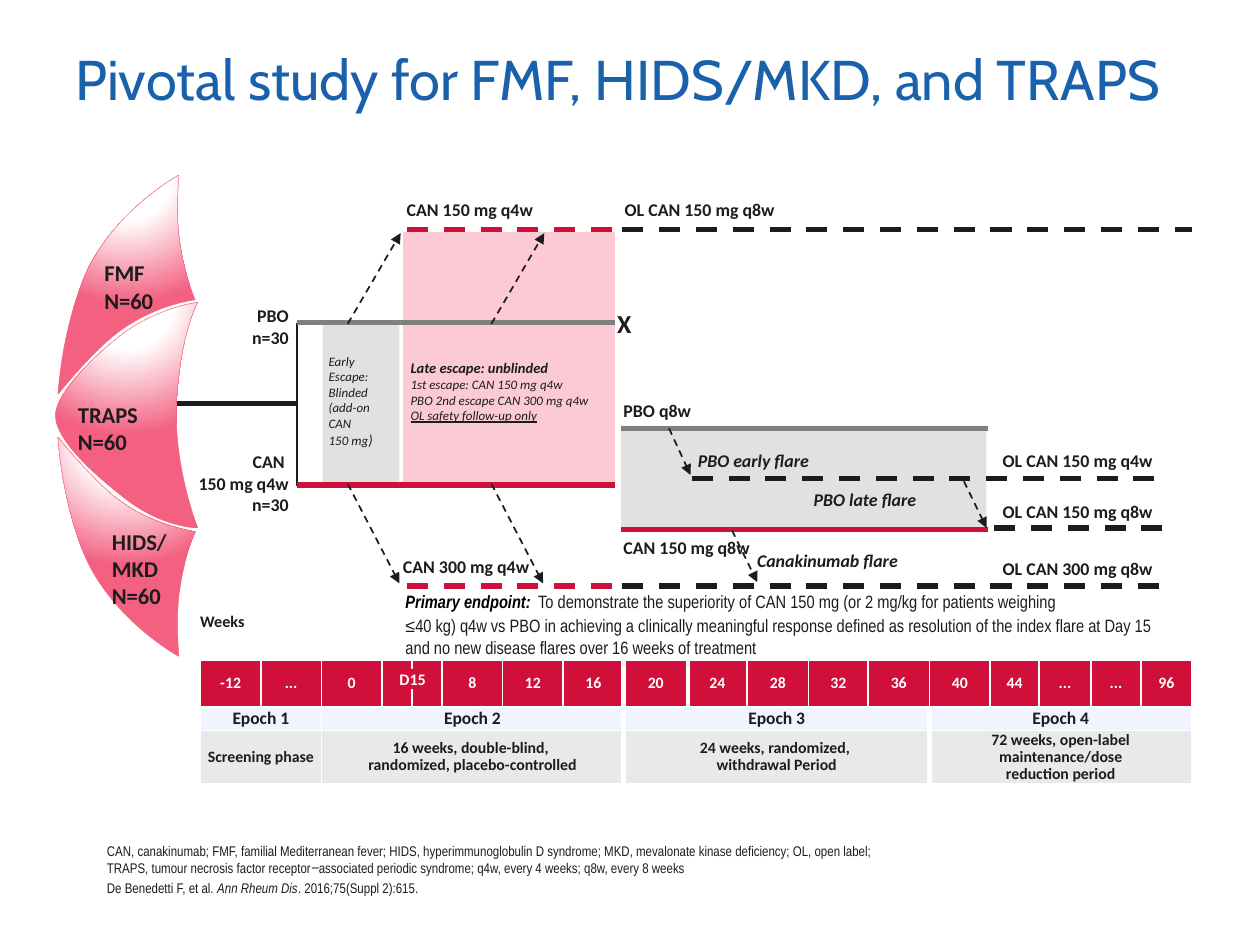
import pptx
import pptx.util
import pptx.dml.color
import pptx.enum.dml
import pptx.enum.shapes
import pptx.enum.text
import pptx.oxml
import pptx.oxml.ns

Inches, Pt = pptx.util.Inches, pptx.util.Pt
ALIGN = pptx.enum.text.PP_ALIGN
ANCHOR = pptx.enum.text.MSO_ANCHOR
INK, RED, GREY, WHITE = "1C1C1C", "D0103A", "808080", "FFFFFF"
PALE_GREY, PALE_PINK, PINK, BLUE = "E1E1E1", "FBCAD5", "F36080", "1961AB"

WEEKS = ["-12", "...", "0", "", "", "8", "12", "16", "20", "24", "28", "32", "36",
         "40", "44", "...", "...", "96"]
COLUMN_WIDTHS = [0.48] * 3 + [0.24] * 2 + [0.48] * 3 + [
    0.51, 0.47, 0.49, 0.47, 0.49, 0.48, 0.39, 0.41, 0.4, 0.4]
ROW_HEIGHTS = [0.37, 0.19, 0.42]
WIDE_GAPS = [{8, 9}, {8, 13}, {8, 13}]
EPOCHS = [
    (0, 2, "Epoch 1", "Screening phase"),
    (2, 6, "Epoch 2", "16 weeks, double-blind, \nrandomized, placebo-controlled"),
    (8, 5, "Epoch 3", "24 weeks, randomized, \nwithdrawal Period"),
    (13, 5, "Epoch 4", "72 weeks, open-label maintenance/dose\nreduction period"),
]
PERIODS = [
    (4.93, 3.38, 2.9, 0.82, PALE_GREY),
    (3.2, 1.84, 1.68, 2.01, PALE_PINK),
    (2.56, 2.56, 0.61, 1.29, PALE_GREY),
]
PETALS = [
    [(1.42, 5.21), (1.42, 5.21), (0.94, 4.95), (0.7, 4.47), (0.49, 4.02), (0.46, 3.47),
     (0.46, 3.47), (0.46, 3.47), (0.77, 3.86), (0.99, 4), (1.23, 4.17), (1.55, 4.22),
     (1.55, 4.22), (1.55, 4.22), (1.47, 4.39), (1.43, 4.66), (1.39, 4.87), (1.42, 5.21),
     (1.42, 5.21)],
    [(1.42, 1.39), (1.42, 1.39), (0.94, 1.65), (0.7, 2.13), (0.49, 2.58), (0.46, 3.13),
     (0.46, 3.13), (0.46, 3.13), (0.76, 2.75), (0.99, 2.6), (1.27, 2.41), (1.55, 2.38),
     (1.55, 2.38), (1.55, 2.38), (1.47, 2.21), (1.43, 1.94), (1.39, 1.73), (1.42, 1.39),
     (1.42, 1.39)],
    [(1.57, 4.19), (1.57, 4.19), (1.27, 4.19), (0.96, 3.93), (0.64, 3.68), (0.44, 3.45),
     (0.44, 3.3), (0.44, 3.14), (0.7, 2.87), (0.91, 2.7), (1.22, 2.44), (1.57, 2.4),
     (1.57, 2.4), (1.57, 2.4), (1.42, 2.66), (1.4, 3.25), (1.39, 3.74), (1.57, 4.19),
     (1.57, 4.19)],
]
BRACKET = [(1.35, 3.2, 2.35, 3.2, INK, 3), (2.36, 2.56, 2.36, 3.86, INK, 1)]
ARMS = [
    (4.93, 3.4, 7.84, 3.4, GREY, 3),
    (4.93, 4.2, 7.84, 4.2, RED, 3),
    (2.36, 2.56, 4.88, 2.56, GREY, 3),
    (2.36, 3.85, 4.88, 3.85, RED, 3),
]
DASHED_ARMS = [
    (5.49, 3.8, 9.25, 3.8, INK, 3),
    (7.89, 4.19, 9.25, 4.19, INK, 3),
    (4.94, 4.65, 9.25, 4.65, INK, 3),
    (3.23, 4.65, 4.89, 4.65, RED, 3),
    (4.94, 1.82, 9.46, 1.82, INK, 3),
    (3.23, 1.82, 4.89, 1.82, RED, 3),
]
ESCAPES = [
    (2.76, 2.57, 3.18, 1.85), (3.9, 2.57, 4.32, 1.85),
    (2.76, 3.84, 3.17, 4.63), (3.9, 3.84, 4.31, 4.63),
    (5.31, 3.4, 5.48, 3.77), (7.65, 3.82, 7.83, 4.19), (5.81, 4.21, 6.01, 4.62),
]
ARM_LABELS = [
    ("CAN 150 mg q4w", 3.13, 1.53, 1.36), ("OL CAN 150 mg q8w", 4.86, 1.53, 1.6),
    ("PBO q8w", 4.85, 3.12, 0.83), ("CAN 150 mg q8w", 4.85, 4.21, 1.36),
    ("OL CAN 150 mg q4w", 7.86, 3.52, 1.6), ("OL CAN 150 mg q8w", 7.86, 3.92, 1.6),
    ("OL CAN 300 mg q8w", 7.86, 4.38, 1.6), ("CAN 300 mg q4w", 3.1, 4.36, 1.36),
]
FLARE_LABELS = [
    ("Canakinumab flare", 5.91, 4.31, 1.48), ("PBO early flare", 5.44, 3.52, 1.23),
    ("PBO late flare", 6.36, 3.83, 1.14),
]
GROUP_LABELS = [("PBO\nn=30", 1.86, 2.37, 0.53, 0.44),
                ("CAN \n150 mg q4w\nn=30", 1.38, 3.53, 1.01, 0.61)]
COHORTS = [("FMF", 0.73, 2.01, 0.64, 0.54, False), ("TRAPS", 0.52, 3.13, 0.82, 0.54, False),
           ("HIDS/MKD", 0.79, 4.14, 0.78, 0.75, True)]
EARLY_ESCAPE = [[("Early Escape:\nBlinded (add-on \nCAN \n150 mg", {}), (")", {"size": 8.3})]]
LATE_ESCAPE = [
    [("Late escape: unblinded\n", {"size": 8.3, "bold": True}),
     ("1st escape: CAN 150 mg q4w", {})],
    [("PBO 2nd escape CAN 300 mg q4w\n", {}), ("OL safety follow-up only", {"underline": True})],
]
ENDPOINT = [[
    ("Primary endpoint:", {"color": "000000", "bold": True, "italic": True}),
    (" ", {"size": 18.5}),
    ("To demonstrate the superiority of CAN 150 mg (or 2 mg/kg for patients weighing \n"
     "≤40 kg) q4w vs PBO in achieving a clinically meaningful response defined as resolution "
     "of the index flare at Day 15 and no new disease flares over 16 weeks of treatment", {}),
]]
FOOTNOTES = [
    [("CAN, canakinumab; FMF, familial Mediterranean fever; HIDS, hyperimmunoglobulin D "
      "syndrome; MKD, mevalonate kinase deficiency; OL, open label; TRAPS, tumour necrosis "
      "factor receptor‒associated periodic syndrome; q4w, every 4 weeks; q8w, every 8 weeks", {})],
    [("De Benedetti F, et al. ", {}), ("Ann Rheum Dis", {"italic": True}),
     (". 2016;75(Suppl 2):615.", {})],
]


def rgb(value):
    return pptx.dml.color.RGBColor.from_string(value)


def element(markup):
    tag, rest = markup[1:].split(" ", 1)
    return pptx.oxml.parse_xml(f"<{tag} {pptx.oxml.ns.nsdecls('a')} {rest}")


def style_font(font, size=None, color=None, name=None, **flags):
    if size:
        font.size = Pt(size)
    if color:
        font.color.rgb = rgb(color)
    if name:
        font.name = name
    for flag, value in flags.items():
        setattr(font, flag, value)


def write(frame, paragraphs, align=ALIGN.LEFT, gap=0, spacing=None, **font):
    if isinstance(paragraphs, str):
        paragraphs = [[(paragraphs, {})]]
    for index, spans in enumerate(paragraphs):
        para = frame.add_paragraph() if index else frame.paragraphs[0]
        para.alignment = align
        if index and gap:
            para.space_before = Pt(gap)
        if spacing:
            para.line_spacing = spacing
        style_font(para.font, **{"name": "Calibri", "color": INK, **font})
        for text, changes in spans:
            for number, line in enumerate(text.split("\n")):
                if number:
                    para.add_line_break()
                if line:
                    span = para.add_run()
                    span.text = line
                    style_font(span.font, **changes)


def add_text(page, paragraphs, left, top, width, height, wrap=False,
             anchor=ANCHOR.MIDDLE, **style):
    box = page.shapes.add_textbox(Inches(left), Inches(top), Inches(width), Inches(height))
    box.text_frame.word_wrap = wrap
    box.text_frame.vertical_anchor = anchor
    write(box.text_frame, paragraphs, **style)


def add_box(page, left, top, width, height, color):
    box = page.shapes.add_shape(pptx.enum.shapes.MSO_SHAPE.RECTANGLE, Inches(left),
                                Inches(top), Inches(width), Inches(height))
    box.shadow.inherit = False
    box.fill.solid()
    box.fill.fore_color.rgb = rgb(color)
    box.line.fill.background()
    return box


def add_line(page, x1, y1, x2, y2, color=INK, weight=1, dashed=False, arrow=False):
    line = page.shapes.add_connector(pptx.enum.shapes.MSO_CONNECTOR.STRAIGHT, Inches(x1),
                                     Inches(y1), Inches(x2), Inches(y2))
    line.line.color.rgb = rgb(color)
    line.line.width = Pt(weight)
    if dashed:
        line.line.dash_style = pptx.enum.dml.MSO_LINE.DASH
    if arrow:
        line.line._get_or_add_ln().append(element('<a:tailEnd type="triangle"/>'))
    line._element.spPr.append(element("<a:effectLst />"))


def add_petal(page, knots):
    points = [(Inches(x), Inches(y)) for x, y in knots]
    builder = page.shapes.build_freeform(*points[0])
    builder.add_line_segments(points[1:], close=True)
    petal = builder.convert_to_shape()
    properties = petal._element.spPr
    corners = list(properties.iter(pptx.oxml.ns.qn("a:lnTo")))
    for start in range(0, len(points) - 1, 3):
        curve = element("<a:cubicBezTo />")
        corners[start].addprevious(curve)
        for corner in corners[start:start + 3]:
            curve.append(corner[0])
            corner.getparent().remove(corner)
    petal.shadow.inherit = False
    petal.line.color.rgb = rgb(PINK)
    petal.line.width = Pt(0.25)
    petal.fill.background()
    stops = "".join(f'<a:gs pos="{place}"><a:srgbClr val="{color}"/></a:gs>'
                    for place, color in [(0, WHITE), (35000, WHITE), (100000, PINK)])
    properties.replace(properties.find(pptx.oxml.ns.qn("a:noFill")), element(
        f'<a:gradFill rotWithShape="1"><a:gsLst>{stops}</a:gsLst><a:path path="circle">'
        '<a:fillToRect l="50000" t="-80000" r="50000" b="180000"/></a:path></a:gradFill>'))


def fill_cell(table, row, first, last, text, fill, size, color):
    cell = table.cell(row, first)
    cell.margin_left = cell.margin_right = cell.margin_top = cell.margin_bottom = 0
    cell.vertical_anchor = ANCHOR.MIDDLE
    properties = cell._tc.get_or_add_tcPr()
    weights = {"L": 3 if first in WIDE_GAPS[row] else 1,
               "R": 3 if last + 1 in WIDE_GAPS[row] else 1, "T": 1, "B": 1}
    for side, weight in weights.items():
        properties.append(element(
            f'<a:ln{side} w="{Pt(weight)}"><a:solidFill><a:srgbClr val="{WHITE}"/>'
            f'</a:solidFill></a:ln{side}>'))
    cell.fill.solid()
    cell.fill.fore_color.rgb = rgb(fill)
    write(cell.text_frame, text, ALIGN.CENTER, spacing=0.9, size=size, color=color, bold=True)


def add_timeline(page):
    table = page.shapes.add_table(3, len(WEEKS), Inches(1.59), Inches(5.24),
                                  Inches(sum(COLUMN_WIDTHS)), Inches(sum(ROW_HEIGHTS))).table
    table.first_row = table.horz_banding = False
    for column, width in zip(table.columns, COLUMN_WIDTHS):
        column.width = Inches(width)
    for row, height in zip(table.rows, ROW_HEIGHTS):
        row.height = Inches(height)
    for index, week in enumerate(WEEKS):
        fill_cell(table, 0, index, index, week, RED, 9, WHITE)
    for first, count, epoch, phase in EPOCHS:
        last = first + count - 1
        for row, text, fill, size in [(1, epoch, "EFF4FF", 10), (2, phase, "E9E9E9", 9)]:
            table.cell(row, first).merge(table.cell(row, last))
            fill_cell(table, row, first, last, text, fill, size, INK)


def main():
    deck = pptx.Presentation()
    deck.slide_width, deck.slide_height = Inches(10), Inches(7.5)
    page = deck.slides.add_slide(deck.slide_layouts[6])
    add_text(page, "Pivotal study for FMF, HIDS/MKD, and TRAPS", 0.5, 0.3, 9, 1.25, True,
             ANCHOR.TOP, size=32, name="Cabin", color=BLUE)
    add_timeline(page)
    for line in BRACKET:
        add_line(page, *line)
    for period in PERIODS:
        add_box(page, *period)
    for petal in PETALS:
        add_petal(page, petal)
    for name, *place, wrap in COHORTS:
        add_text(page, [[(name, {})], [("N=60", {})]], *place, wrap, ANCHOR.TOP,
                 size=12.9, bold=True)
    for text, *place in GROUP_LABELS:
        add_text(page, text, *place, align=ALIGN.RIGHT, size=10.2, bold=True)
    add_text(page, EARLY_ESCAPE, 2.51, 2.75, 0.65, 0.86, True, size=7.4, italic=True)
    add_text(page, LATE_ESCAPE, 3.16, 2.8, 1.82, 0.61, True, size=7.4, italic=True)
    for labels, italic in [(ARM_LABELS, False), (FLARE_LABELS, True)]:
        for text, *place in labels:
            add_text(page, text, *place, 0.27, size=10.2, bold=True, italic=italic)
    add_text(page, "Weeks", 1.49, 4.8, 0.61, 0.26, size=9.2, bold=True)
    add_text(page, "X", 4.8, 2.39, 0.34, 0.35, size=14.8, bold=True)
    for line in ARMS:
        add_line(page, *line)
    for line in DASHED_ARMS:
        add_line(page, *line, dashed=True)
    for line in ESCAPES:
        add_line(page, *line, dashed=True, arrow=True)
    day = add_box(page, 3.12, 5.31, 0.31, 0.16, RED).text_frame
    day.margin_left = day.margin_right = day.margin_top = day.margin_bottom = 0
    day.vertical_anchor = ANCHOR.MIDDLE
    write(day, "D15", ALIGN.CENTER, size=9.2, color=WHITE, bold=True)
    add_text(page, ENDPOINT, 3.12, 4.52, 6.13, 0.75, True, size=10.2, name="Arial Narrow")
    add_text(page, FOOTNOTES, 0.75, 6.6, 6.58, 0.56, True, ANCHOR.BOTTOM, gap=1.6,
             size=8, name="Arial Narrow")
    deck.save("out.pptx")


if __name__ == "__main__":
    main()
